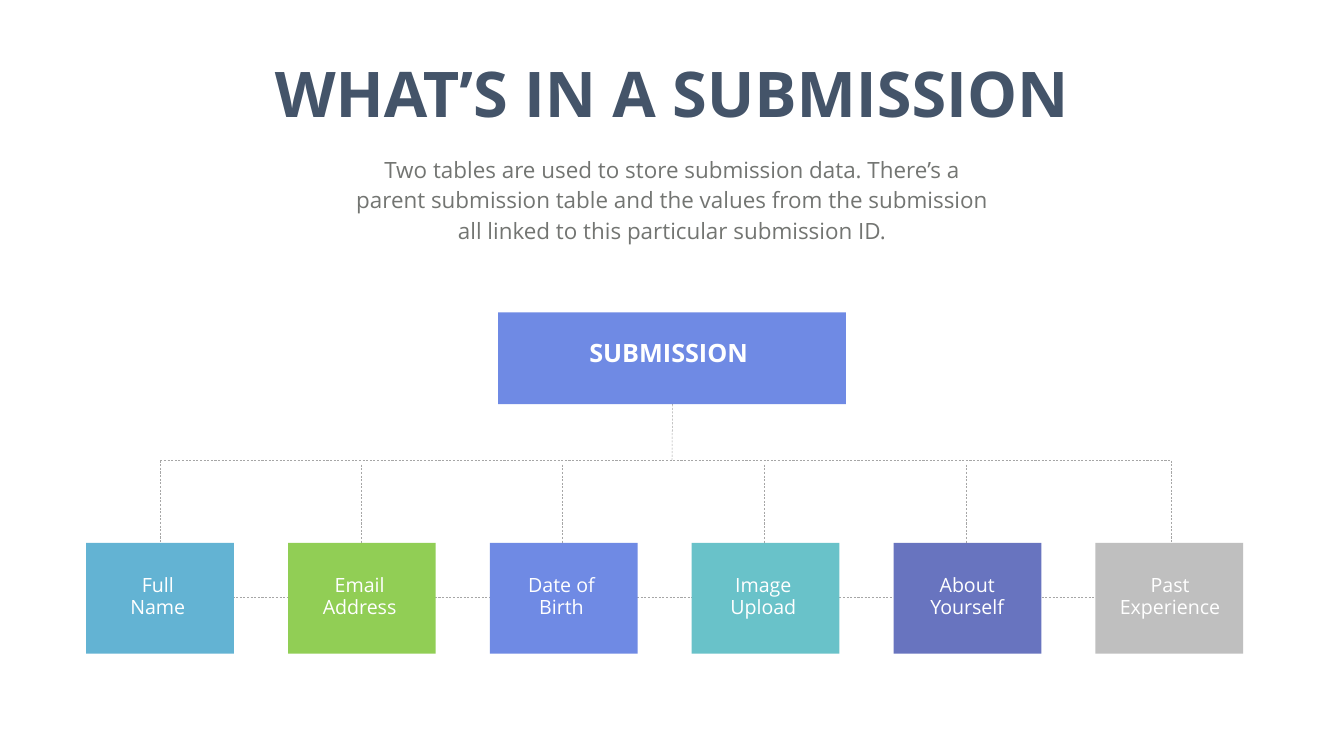
from lxml import etree
from pptx import Presentation
from pptx.dml.color import RGBColor
from pptx.enum import dml, shapes, text
from pptx.oxml import ns
from pptx.util import Inches, Pt

BLUE = RGBColor(0x6F, 0x8A, 0xE4)
SKY = RGBColor(0x63, 0xB3, 0xD3)
GREEN = RGBColor(0x91, 0xCE, 0x55)
TEAL = RGBColor(0x69, 0xC2, 0xC9)
INDIGO = RGBColor(0x68, 0x74, 0xBF)
SILVER = RGBColor(0xBF, 0xBF, 0xBF)
LINE_GRAY = RGBColor(0xA6, 0xA6, 0xA6)
TITLE_COLOR = RGBColor(0x44, 0x54, 0x69)
BODY_COLOR = RGBColor(0x73, 0x75, 0x72)
WHITE = RGBColor(0xFF, 0xFF, 0xFF)

TITLE = "WHAT’S IN A SUBMISSION"
INTRO = (
    "Two tables are used to store submission data. There’s a parent submission "
    "table and the values from the submission all linked to this particular submission ID."
)
PARENT = "SUBMISSION"
# label (\v is a line break), box colour, x of the stem, label inset from the box
FIELDS = [
    ("Full\vName", SKY, 3.18, 0.21),
    ("Email Address", GREEN, 7.16, 0.21),
    ("Date of Birth", BLUE, 11.16, 0.21),
    ("Image Upload", TEAL, 15.17, 0.21),
    ("About Yourself", INDIGO, 19.17, 0.25),
    ("Past Experience", SILVER, 23.24, 0.27),
]

FIELD_LEFT, FIELD_TOP, FIELD_PITCH = 1.71, 10.77, 4.004
FIELD_WIDTH, FIELD_HEIGHT = 2.93, 2.2
RAIL_TOP, RAIL_MIDDLE, STEM_BOTTOM = 9.14, 11.85, 12.51

HEADING_INSETS = (0.48, 0.24, 0.48, 0.24)
LABEL_INSETS = (0.1, 0.1, 0.2, 0.1)
TITLE_FONT = {"size": Pt(90), "bold": True}
INTRO_FONT = {"size": Pt(32)}
PARENT_FONT = {"size": Pt(36), "bold": True}
LABEL_FONT = {"size": Pt(28)}


def add_dashed_line(slide, x1, y1, x2, y2):
    line = slide.shapes.add_connector(
        shapes.MSO_CONNECTOR.STRAIGHT, *map(Inches, (x1, y1, x2, y2)))
    line.line.color.rgb = LINE_GRAY
    line.line.width = Pt(0.75)
    line.line.dash_style = dml.MSO_LINE.DASH
    etree.SubElement(line._element.spPr, ns.qn("a:effectLst"))


def add_box(slide, position, color):
    box = slide.shapes.add_shape(
        shapes.MSO_SHAPE.RECTANGLE, *map(Inches, position))
    box.shadow.inherit = False
    box.fill.solid()
    box.fill.fore_color.rgb = color
    box.line.fill.background()


def add_text(slide, position, content, font, color, insets, line_spacing=None):
    frame = slide.shapes.add_textbox(*map(Inches, position)).text_frame
    frame.word_wrap = True
    frame.auto_size = text.MSO_AUTO_SIZE.SHAPE_TO_FIT_TEXT
    for side, inset in zip(("left", "top", "right", "bottom"), insets):
        setattr(frame, f"margin_{side}", Inches(inset))
    frame.text = content
    paragraph = frame.paragraphs[0]
    paragraph.alignment = text.PP_ALIGN.CENTER
    paragraph.line_spacing = line_spacing
    for run in paragraph.runs:
        run.font.color.rgb = color
        for name, value in {"name": "Open Sans", **font}.items():
            setattr(run.font, name, value)


def main():
    presentation = Presentation()
    presentation.slide_width = Inches(26.66)
    presentation.slide_height = Inches(15)
    slide = presentation.slides.add_slide(presentation.slide_layouts[6])

    # Lines first, so that the boxes cover their ends
    first_stem, last_stem = FIELDS[0][2], FIELDS[-1][2]
    for _, _, stem, _ in FIELDS:
        top = RAIL_TOP if stem in (first_stem, last_stem) else RAIL_TOP + 0.08
        add_dashed_line(slide, stem, top, stem, STEM_BOTTOM)
    add_dashed_line(slide, 13.34, 8.02, 13.33, 9.12)
    for rail in (RAIL_MIDDLE, RAIL_TOP):
        add_dashed_line(slide, first_stem, rail, last_stem, rail)

    add_box(slide, (9.88, 6.2, 6.9, 1.82), BLUE)
    add_text(slide, (10.05, 6.64, 6.53, 0.78), PARENT, PARENT_FONT, WHITE,
             LABEL_INSETS, 0.95)

    for index, (label, color, _, inset) in enumerate(FIELDS):
        left = FIELD_LEFT + index * FIELD_PITCH
        add_box(slide, (left, FIELD_TOP, FIELD_WIDTH, FIELD_HEIGHT), color)
        add_text(slide, (left + inset, 11.3, 2.52, 1.1), label, LABEL_FONT, WHITE,
                 LABEL_INSETS, 0.95)

    add_text(slide, (4.06, 0.85, 18.54, 1.99), TITLE, TITLE_FONT, TITLE_COLOR,
             HEADING_INSETS)
    add_text(slide, (6.53, 2.8, 13.61, 2.29), INTRO, INTRO_FONT, BODY_COLOR,
             HEADING_INSETS, Pt(43))

    presentation.save("out.pptx")


if __name__ == "__main__":
    main()
